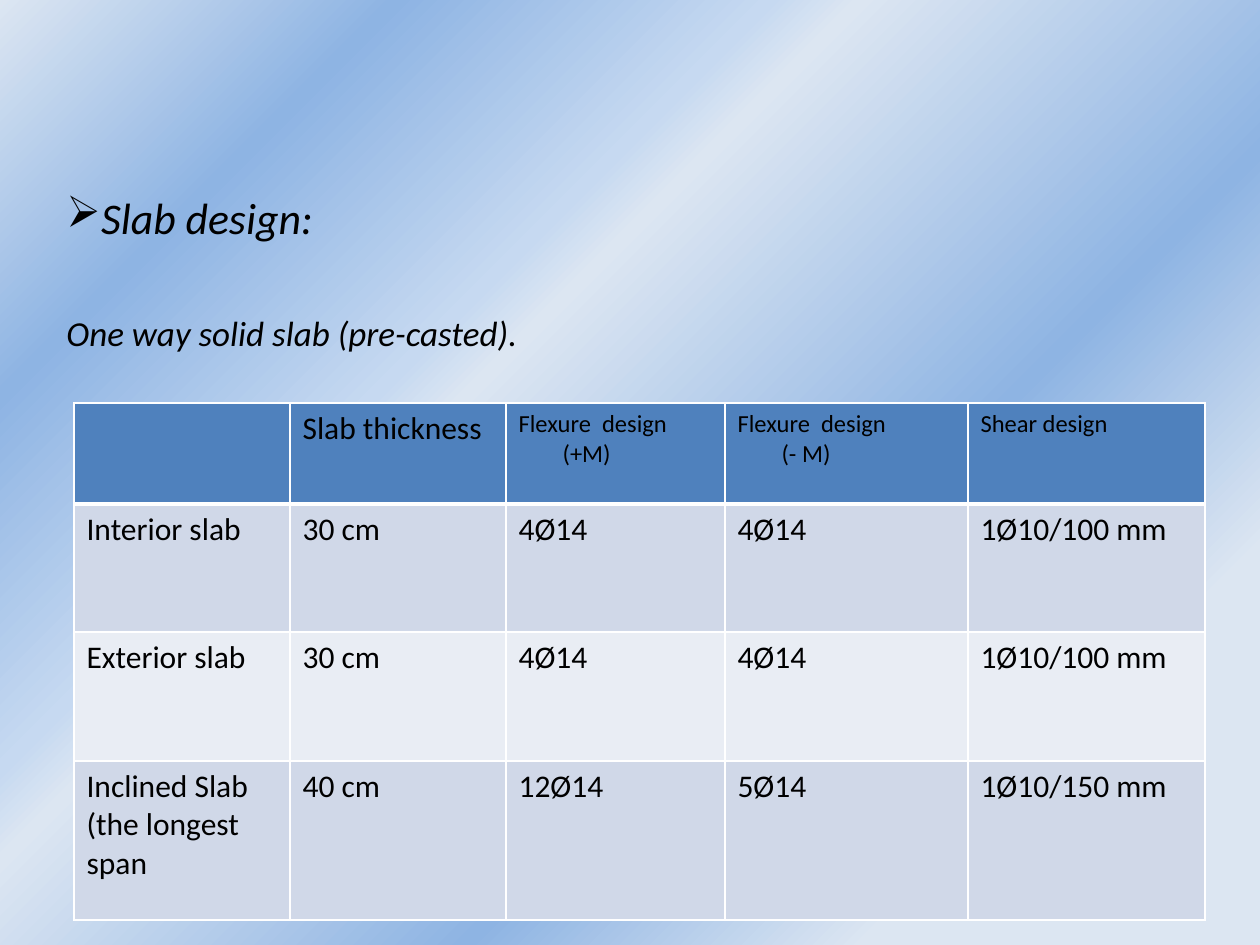
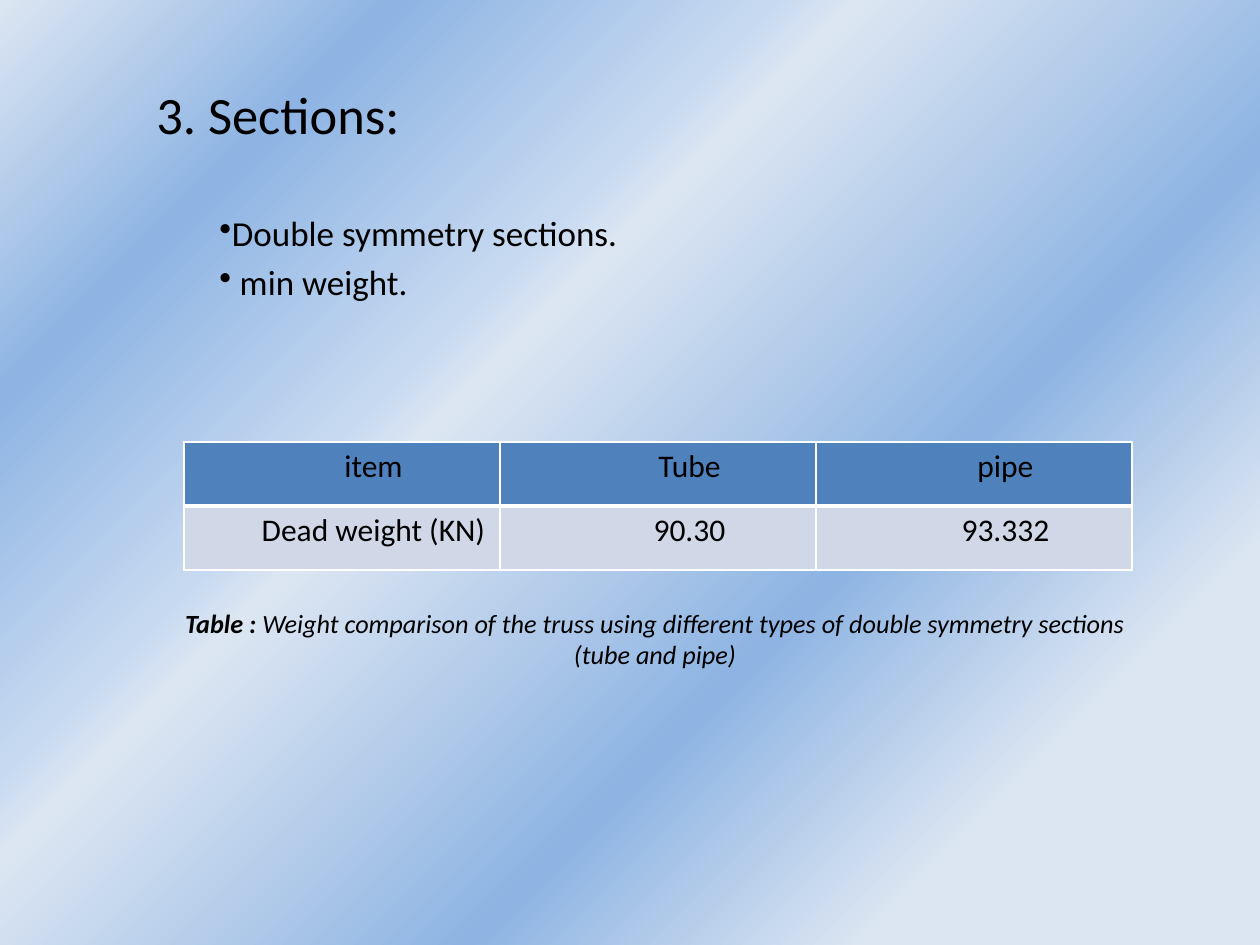
import pptx
import pptx.dml.color
import pptx.enum.text
import pptx.oxml
import pptx.oxml.ns
import pptx.util

RGBColor = pptx.dml.color.RGBColor
CENTER = pptx.enum.text.PP_ALIGN.CENTER
qn = pptx.oxml.ns.qn

BLACK = RGBColor(0x00, 0x00, 0x00)
WHITE = RGBColor(0xFF, 0xFF, 0xFF)
HEADER_BLUE = RGBColor(0x4F, 0x81, 0xBD)
BAND_DARK = RGBColor(0xD0, 0xD8, 0xE8)
BAND_LIGHT = RGBColor(0xE9, 0xED, 0xF4)
MIST = RGBColor(0xDC, 0xE6, 0xF2)
SKY = RGBColor(0x8E, 0xB4, 0xE3)
PALE = RGBColor(0xC6, 0xD9, 0xF1)

BACKDROP = [(18, MIST), (36, SKY), (61, MIST), (65, PALE), (82, SKY), (100, MIST)]
PX_PER_INCH = 126
FONT = "Calibri"
NAMESPACE = pptx.oxml.ns.nsdecls("a")


def px(length):
    return pptx.util.Emu(round(length * 914400 / PX_PER_INCH))


class Deck:
    def __init__(self, width, height):
        self.presentation = pptx.Presentation()
        self.presentation.slide_width = px(width)
        self.presentation.slide_height = px(height)
        self.slide = None

    def add_slide(self):
        self.slide = self.presentation.slides.add_slide(self.presentation.slide_layouts[6])
        self.slide.background.fill.solid()
        background = self.slide.element.find(".//" + qn("p:bgPr"))
        stops = "".join(
            f'<a:gs pos="{share * 1000}"><a:srgbClr val="{color}"/></a:gs>'
            for share, color in BACKDROP
        )
        gradient = pptx.oxml.parse_xml(
            f'<a:gradFill {NAMESPACE} rotWithShape="1"><a:gsLst>{stops}</a:gsLst>'
            '<a:path path="circle"><a:fillToRect l="100000" t="100000"/></a:path>'
            "</a:gradFill>"
        )
        background.replace(background[0], gradient)

    def add_text(self, paragraph, text, size, bold=False, italic=False):
        run = paragraph.add_run()
        run.text = text
        run.font.name = FONT
        run.font.size = pptx.util.Pt(size)
        run.font.bold = bold
        run.font.italic = italic
        run.font.color.rgb = BLACK

    def indent(self, paragraph, margin, bullet=None):
        properties = paragraph._p.get_or_add_pPr()
        properties.set("marL", str(px(margin)))
        properties.set("indent", "0")
        if bullet:
            properties.append(pptx.oxml.parse_xml(f'<a:buChar {NAMESPACE} char="{bullet}"/>'))

    def text_box(self, left, top, width, height):
        frame = self.slide.shapes.add_textbox(px(left), px(top), px(width), px(height)).text_frame
        frame.word_wrap = True
        return frame

    def outline(self, left, top, width, height, lines, italic=False):
        frame = self.text_box(left, top, width, height)
        for index, (text, size, gap, margin, bullet) in enumerate(lines):
            paragraph = frame.add_paragraph() if index else frame.paragraphs[0]
            paragraph.space_before = pptx.util.Pt(gap)
            self.indent(paragraph, margin, bullet)
            self.add_text(paragraph, text, size, italic=italic)

    def caption(self, left, top, width, height, label, text):
        paragraph = self.text_box(left, top, width, height).paragraphs[0]
        paragraph.alignment = CENTER
        self.add_text(paragraph, label, 15, bold=True, italic=True)
        self.add_text(paragraph, text, 15, italic=True)

    def border(self, cell, sides):
        properties = cell._tc.get_or_add_tcPr()
        for index, (side, points) in enumerate(sides.items()):
            properties.insert(index, pptx.oxml.parse_xml(
                f'<a:ln{side} {NAMESPACE} w="{points * 12700}"><a:solidFill>'
                f'<a:srgbClr val="{WHITE}"/></a:solidFill></a:ln{side}>'
            ))

    def table(self, left, top, widths, heights, rows, small_headers=(), centered=False):
        grid = self.slide.shapes.add_table(
            len(rows), len(widths), px(left), px(top), px(sum(widths)), px(sum(heights))
        ).table
        grid.first_row = grid.horz_banding = False
        for column, width in zip(grid.columns, widths):
            column.width = px(width)
        for r, (row, height) in enumerate(zip(rows, heights)):
            grid.rows[r].height = px(height)
            for c, text in enumerate(row):
                cell = grid.cell(r, c)
                cell.fill.solid()
                cell.fill.fore_color.rgb = HEADER_BLUE if r == 0 else (BAND_LIGHT, BAND_DARK)[r % 2]
                self.border(cell, {"L": 1, "R": 1, "T": 3 if r == 1 else 1, "B": 3 if r == 0 else 1})
                size = 14 if r == 0 and c in small_headers else 18
                self.fill_cell(cell, text, size, centered)

    def fill_cell(self, cell, text, size, centered):
        if centered:
            cell.margin_left = cell.margin_right = px(9)
            cell.margin_top = cell.margin_bottom = 0
        for index, line in enumerate(text.split("\n") if text else []):
            frame = cell.text_frame
            paragraph = frame.add_paragraph() if index else frame.paragraphs[0]
            if centered:
                paragraph.alignment = CENTER
                paragraph.line_spacing = 1.15
                self.indent(paragraph, 63)
            elif index:
                self.indent(paragraph, 44)
            self.add_text(paragraph, line, size)


def slab_design(deck):
    deck.add_slide()
    deck.outline(54, 185, 1071, 169, [
        ("Slab design:", 25, 0, 0, "➢"),
        ("One way solid slab (pre-casted).", 20, 39, 0, None),
    ], italic=True)
    deck.table(74, 403, [216, 216, 219, 243, 237], [101, 128, 129, 159], [
        ["", "Slab thickness", "Flexure  design\n(+M)", "Flexure  design\n(- M)", "Shear design"],
        ["Interior slab", "30 cm", "4Ø14", "4Ø14", "1Ø10/100 mm"],
        ["Exterior slab", "30 cm", "4Ø14", "4Ø14", "1Ø10/100 mm"],
        ["Inclined Slab (the longest span", "40 cm", "12Ø14", "5Ø14", "1Ø10/150 mm"],
    ], small_headers=(2, 3, 4))


def truss_sections(deck):
    deck.add_slide()
    deck.outline(144, 76, 927, 702, [
        ("3. Sections:", 30, 0, 0, None),
        ("Double symmetry sections.", 20, 38, 63, "•"),
        (" min weight.", 20, 4, 63, "•"),
    ])
    deck.table(184, 442, [316] * 3, [64] * 2, [
        ["item", "Tube", "pipe"],
        ["Dead weight (KN)", "90.30", "93.332"],
    ], centered=True)
    deck.caption(
        154, 601, 1002, 77, "Table : ",
        "Weight comparison of the truss using different types of double symmetry sections (tube and pipe)",
    )


def main():
    deck = Deck(1260, 945)
    slab_design(deck)
    truss_sections(deck)
    deck.presentation.save("out.pptx")


if __name__ == "__main__":
    main()
